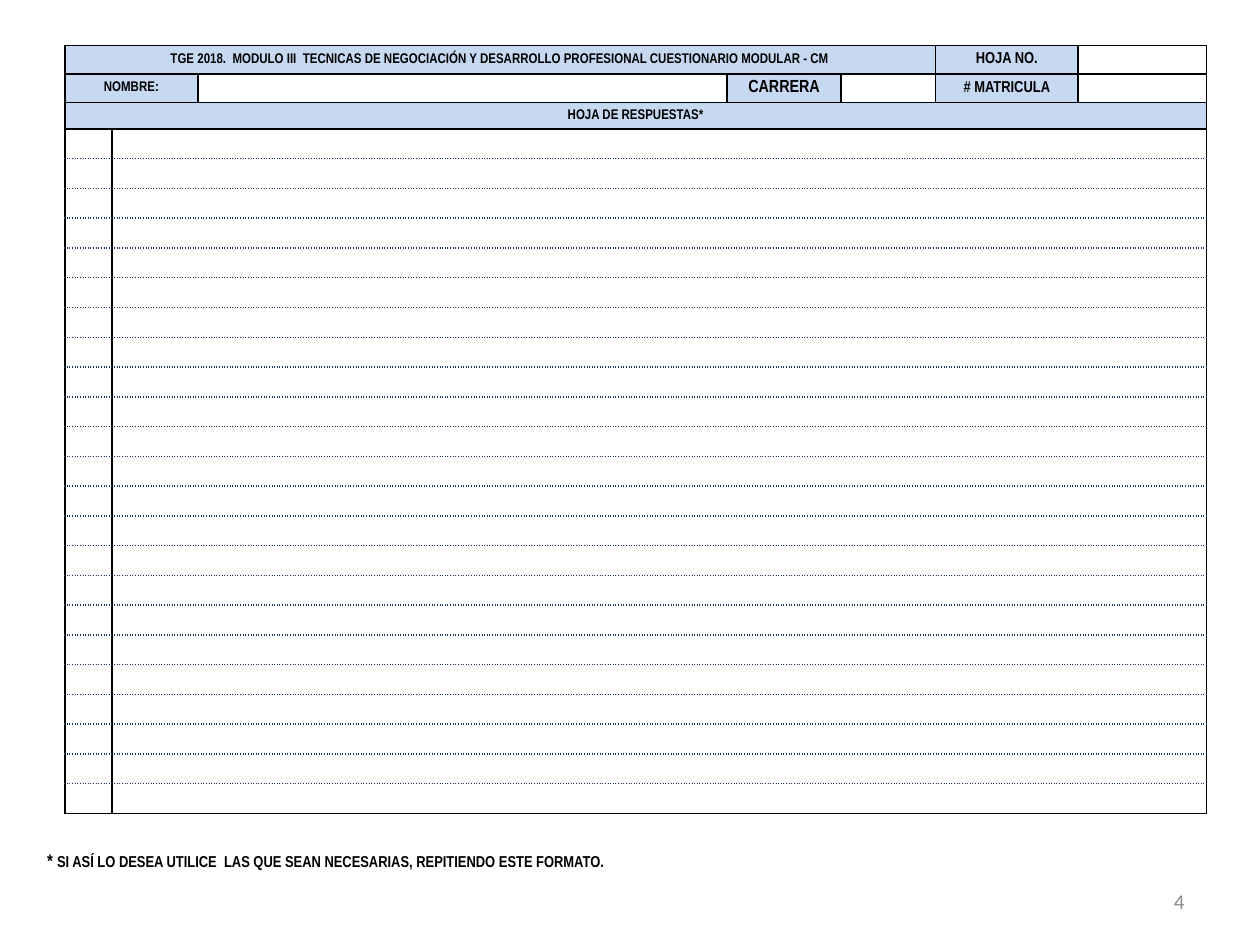
from lxml import etree
from pptx import Presentation
from pptx.dml.color import RGBColor
from pptx.enum.text import MSO_ANCHOR, PP_ALIGN
from pptx.oxml.ns import qn
from pptx.util import Cm, Pt

MIDDLE, TOP = MSO_ANCHOR.MIDDLE, MSO_ANCHOR.TOP
LEFT, CENTER, RIGHT = PP_ALIGN.LEFT, PP_ALIGN.CENTER, PP_ALIGN.RIGHT
BLANK_LAYOUT = 6
COLORS = {"ink": "000000", "label": "C6D9F1", "blank": "FFFFFF",
          "rule": "17375E", "number": "8C8C8C"}
NARROW = "Arial Narrow"

COLUMN_WIDTHS = [0.95, 1.73, 10.67, 2.29, 1.91, 2.87, 2.59]
HEADER_HEIGHTS = [0.57, 0.58, 0.53]
ANSWER_ROWS, ANSWER_HEIGHT = 23, 0.6
# Each header cell: column, columns spanned, label, text size
HEADER = [
    [(0, 5, "TGE 2018.  MODULO III  TECNICAS DE NEGOCIACIÓN Y DESARROLLO "
            "PROFESIONAL CUESTIONARIO MODULAR - CM", 8),
     (5, 1, "HOJA NO.", 9), (6, 1, "", 8)],
    [(0, 2, "NOMBRE:", 8), (2, 1, "", 8), (3, 1, "CARRERA", 10),
     (4, 1, "", 8), (5, 1, "# MATRICULA", 9), (6, 1, "", 8)],
    [(0, 7, "HOJA DE RESPUESTAS*", 8)],
]


def add_run(paragraph, text, size, font=NARROW, color="ink", bold=True):
    run = paragraph.add_run()
    run.text = text
    run.font.size = Pt(size)
    run.font.name = font
    run.font.bold = bold
    run.font.color.rgb = RGBColor.from_string(COLORS[color])


def set_borders(cell, dotted=()):
    """Draw all four sides in solid ink, except the dotted ones."""
    properties = cell._tc.get_or_add_tcPr()
    for side in "LRTB":
        color, dash = ("rule", "sysDot") if side in dotted else ("ink", "solid")
        line = etree.SubElement(properties, qn(f"a:ln{side}"), w=str(Pt(1)))
        fill = etree.SubElement(line, qn("a:solidFill"))
        etree.SubElement(fill, qn("a:srgbClr"), val=COLORS[color])
        etree.SubElement(line, qn("a:prstDash"), val=dash)


def format_cell(cell, dotted=(), fill=None):
    """Set borders, fill and margins; small empty text keeps rows low."""
    set_borders(cell, dotted)
    if fill:
        cell.fill.solid()
        cell.fill.fore_color.rgb = RGBColor.from_string(COLORS[fill])
    else:
        cell.fill.background()
    cell.margin_top = cell.margin_bottom = 0
    cell.margin_left = cell.margin_right = Cm(0.1)
    cell.vertical_anchor = MIDDLE
    end = cell.text_frame.paragraphs[0]._p.get_or_add_endParaRPr()
    end.set("sz", "800")


def fill_header(table):
    for row, entries in enumerate(HEADER):
        for column, span, label, size in entries:
            for offset in range(span):
                format_cell(table.cell(row, column + offset),
                            fill="label" if label else "blank")
            cell = table.cell(row, column)
            if span > 1:
                cell.merge(table.cell(row, column + span - 1))
            if label:
                paragraph = cell.text_frame.paragraphs[0]
                paragraph.alignment = CENTER
                paragraph.space_before = Pt(3.6)
                add_run(paragraph, label, size)


def fill_answer_rows(table):
    first, last = len(HEADER), len(HEADER) + ANSWER_ROWS - 1
    last_column = len(COLUMN_WIDTHS) - 1
    for row in range(first, last + 1):
        dotted = ("T" if row > first else "") + ("B" if row < last else "")
        for column in range(last_column + 1):
            format_cell(table.cell(row, column), dotted)
        table.cell(row, 1).merge(table.cell(row, last_column))


def add_answer_sheet(slide, left, top):
    heights = HEADER_HEIGHTS + [ANSWER_HEIGHT] * ANSWER_ROWS
    table = slide.shapes.add_table(
        len(heights), len(COLUMN_WIDTHS), Cm(left), Cm(top),
        Cm(sum(COLUMN_WIDTHS)), Cm(sum(heights))).table
    table.first_row = table.horz_banding = False
    for column, width in zip(table.columns, COLUMN_WIDTHS):
        column.width = Cm(width)
    for row, height in zip(table.rows, heights):
        row.height = Cm(height)
    fill_header(table)
    fill_answer_rows(table)


def add_text_line(slide, left, top, width, height, align, anchor):
    """Add a one-paragraph text box and return its paragraph."""
    frame = slide.shapes.add_textbox(
        Cm(left), Cm(top), Cm(width), Cm(height)).text_frame
    frame.word_wrap = True
    frame.vertical_anchor = anchor
    paragraph = frame.paragraphs[0]
    paragraph.alignment = align
    return paragraph


def main():
    prs = Presentation()
    prs.slide_width, prs.slide_height = Cm(25.4), Cm(19.05)
    slide = prs.slides.add_slide(prs.slide_layouts[BLANK_LAYOUT])

    page_number = add_text_line(slide, 18.2, 17.66, 5.93, 1.01, RIGHT, MIDDLE)
    add_run(page_number, "4", 12, "Calibri", "number", bold=False)

    add_answer_sheet(slide, 1.31, 0.92)

    footnote = add_text_line(slide, 0.7, 17, 23.6, 0.73, LEFT, TOP)
    add_run(footnote, "* ", 10.5)
    add_run(footnote, "SI ASÍ LO DESEA UTILICE  LAS QUE SEAN NECESARIAS, "
                      "REPITIENDO ESTE FORMATO.", 9)
    prs.save("out.pptx")


if __name__ == "__main__":
    main()
